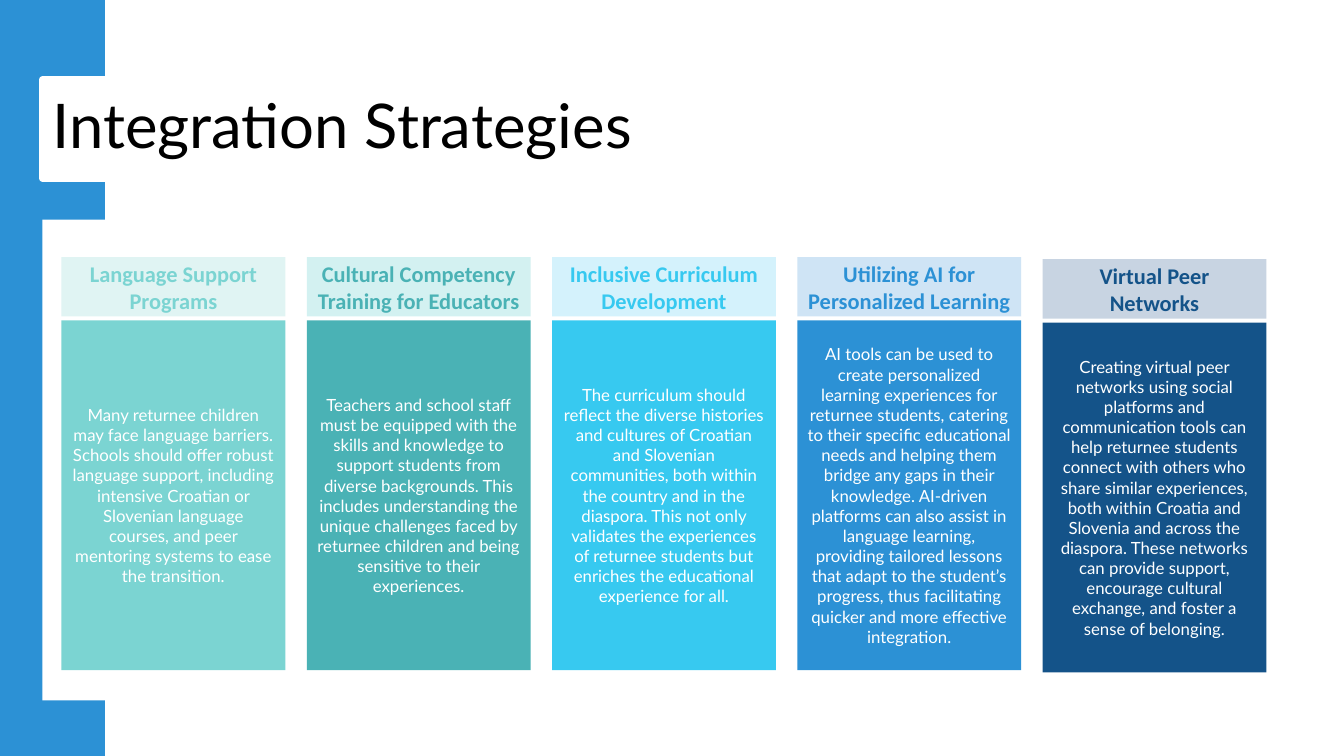
from pptx import Presentation
from pptx.dml.color import RGBColor
from pptx.enum.shapes import MSO_SHAPE
from pptx.enum.text import MSO_ANCHOR, MSO_AUTO_SIZE, PP_ALIGN
from pptx.util import Inches, Pt

BLUE, WHITE, BLACK = "2C91D5", "FFFFFF", "000000"

# heading, heading fill, main colour, drop from the row's top, body
STRATEGIES = [
    ("Language Support Programs", "E0F4F3", "7BD4D2", 0,
     "Many returnee children may face language barriers. Schools should offer "
     "robust language support, including intensive Croatian or Slovenian language "
     "courses, and peer mentoring systems to ease the transition."),
    ("Cultural Competency Training for Educators", "D3F1F1", "4AB2B5", 0,
     "Teachers and school staff must be equipped with the skills and knowledge to "
     "support students from diverse backgrounds. This includes understanding the "
     "unique challenges faced by returnee children and being sensitive to their "
     "experiences."),
    ("Inclusive Curriculum Development", "D4F2FC", "37C9F0", 0,
     "The curriculum should reflect the diverse histories and cultures of Croatian "
     "and Slovenian communities, both within the country and in the diaspora. This "
     "not only validates the experiences of returnee students but enriches the "
     "educational experience for all."),
    ("Utilizing AI for Personalized Learning", "CFE4F5", BLUE, 0,
     "AI tools can be used to create personalized learning experiences for returnee "
     "students, catering to their specific educational needs and helping them bridge "
     "any gaps in their knowledge. AI-driven platforms can also assist in language "
     "learning, providing tailored lessons that adapt to the student’s progress, "
     "thus facilitating quicker and more effective integration."),
    ("Virtual Peer Networks", "C8D4E2", "145389", 0.02,
     "Creating virtual peer networks using social platforms and communication tools "
     "can help returnee students connect with others who share similar experiences, "
     "both within Croatia and Slovenia and across the diaspora. These networks can "
     "provide support, encourage cultural exchange, and foster a sense of belonging."),
]


def rgb(color):
    return RGBColor.from_string(color)


def add_box(slide, x, y, w, h, fill):
    sp = slide.shapes.add_shape(MSO_SHAPE.RECTANGLE,
                                Inches(x), Inches(y), Inches(w), Inches(h))
    sp.shadow.inherit = False
    sp.fill.solid()
    sp.fill.fore_color.rgb = rgb(fill)
    sp.line.fill.background()
    return sp


def write(sp, text, size, font, color, bold=False, align=PP_ALIGN.CENTER):
    tf = sp.text_frame
    tf.word_wrap = True
    tf.auto_size = MSO_AUTO_SIZE.NONE
    tf.vertical_anchor = MSO_ANCHOR.MIDDLE
    p = tf.paragraphs[0]
    p.alignment = align
    r = p.add_run()
    r.text = text
    r.font.size, r.font.name, r.font.bold = Pt(size), font, bold
    r.font.color.rgb = rgb(color)
    return p


def add_side_band(slide, x, y, w, h):
    """Blue band with a white cut-out beside the columns."""
    add_box(slide, x, y, w, h, BLUE)
    add_box(slide, x + 0.42, y + 2.18, w, 4.77, WHITE)


def add_title(slide, x, y, w, h):
    title = slide.shapes.title
    title.left, title.top = Inches(x), Inches(y)
    title.width, title.height = Inches(w), Inches(h)
    title.fill.solid()
    title.fill.fore_color.rgb = rgb(WHITE)
    title.line.color.rgb = rgb(WHITE)
    title.line.width = Pt(4.5)
    p = write(title, "Integration Strategies", 44, "Lato", BLACK,
              align=PP_ALIGN.LEFT)
    p.line_spacing = 0.9
    # Bring the title in front of the band
    slide.shapes[-1].element.addnext(title.element)


def add_column(slide, x, y, w, h, strategy):
    heading, tint, color, drop, body = strategy
    head_h, gap = 0.59, 0.04
    y += drop
    head = add_box(slide, x, y, w, head_h, tint)
    write(head, heading, 16, "Calibri", color, bold=True)
    body_y = head_h + gap
    panel = add_box(slide, x, y + body_y, w, h - body_y, color)
    write(panel, body, 12, "Lato", WHITE)


def add_columns(slide, x, y, w, h):
    col_w = 2.22
    pitch = (w - col_w) / (len(STRATEGIES) - 1)
    for i, strategy in enumerate(STRATEGIES):
        add_column(slide, x + i * pitch, y, col_w, h, strategy)


def main():
    prs = Presentation()
    prs.slide_width, prs.slide_height = Inches(13.33), Inches(7.5)
    slide = prs.slides.add_slide(prs.slide_layouts[5])
    add_side_band(slide, 0, 0, 1.04, 7.5)
    add_title(slide, 0.42, 0.79, 10.13, 0.98)
    add_columns(slide, 0.61, 2.55, 11.95, 4.1)
    prs.save("out.pptx")


if __name__ == "__main__":
    main()
